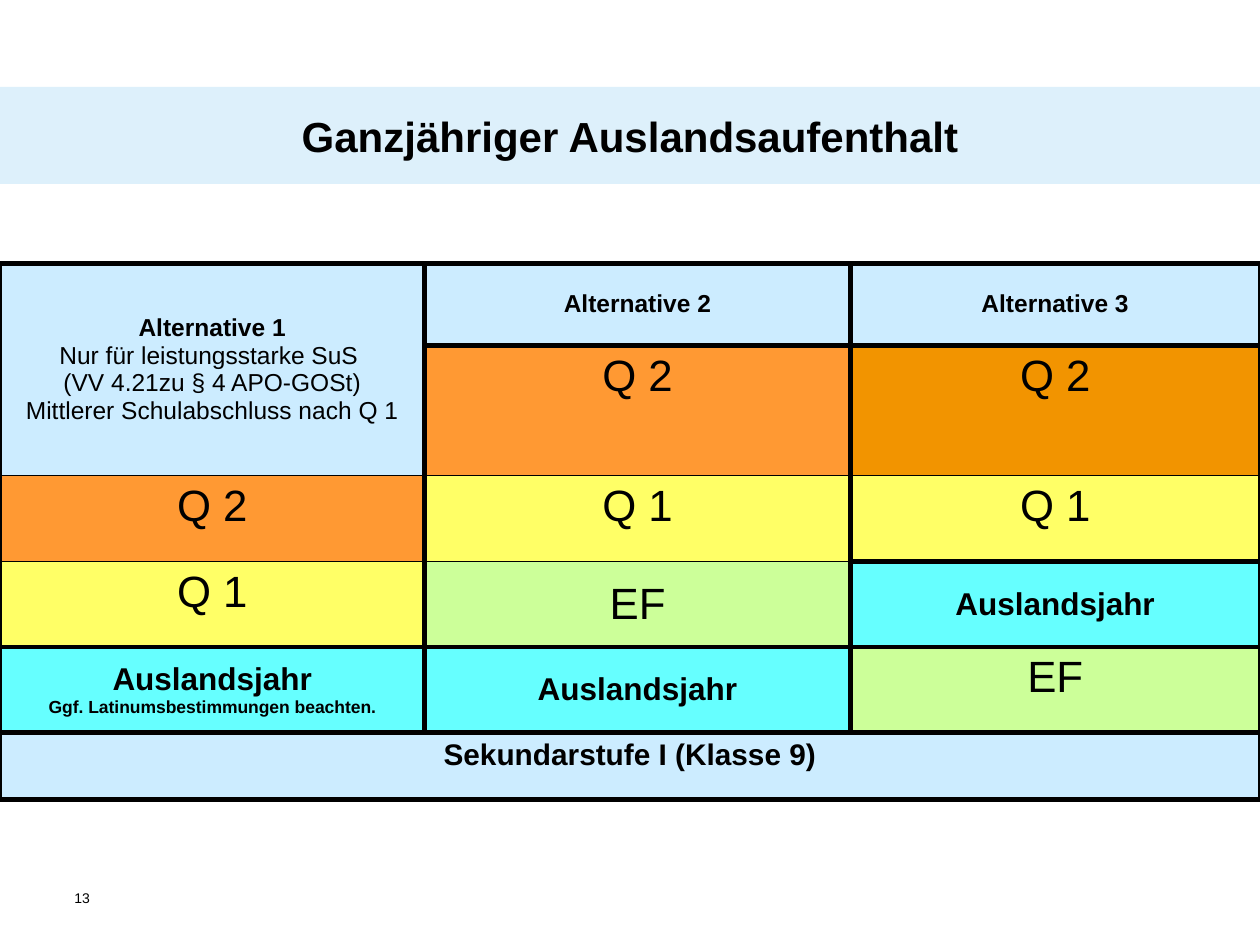
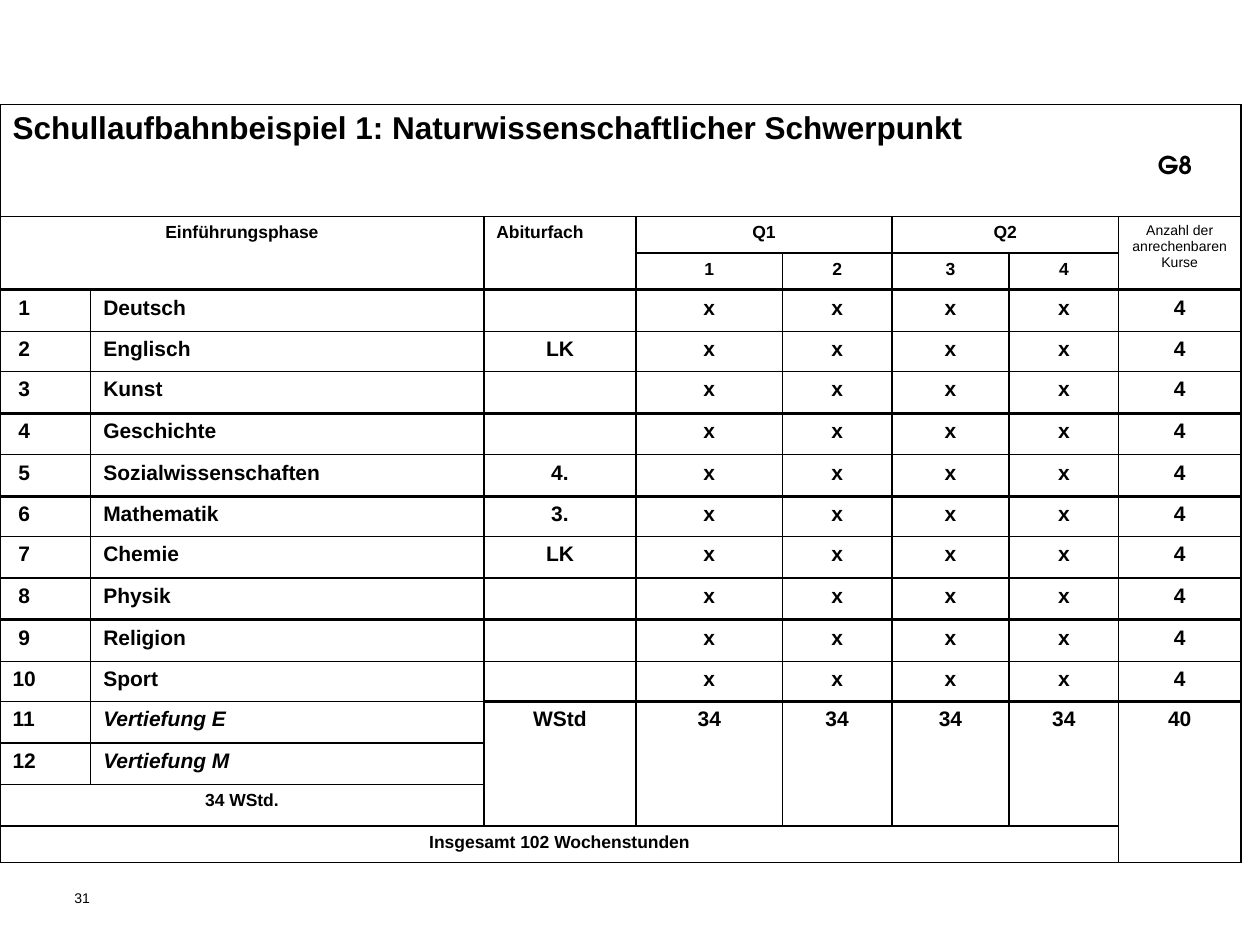
import pptx
import pptx.util
import pptx.dml.color
import pptx.enum.shapes
import pptx.enum.text
import pptx.oxml
import pptx.oxml.ns
import lxml.etree

Inches = pptx.util.Inches
Pt = pptx.util.Pt
qn = pptx.oxml.ns.qn
LEFT = pptx.enum.text.PP_ALIGN.LEFT
MID = pptx.enum.text.PP_ALIGN.CENTER
HIGH = pptx.enum.text.MSO_ANCHOR.TOP
HALF = pptx.enum.text.MSO_ANCHOR.MIDDLE
FACE = "Arial"
PLAIN = "{2D5ABB26-0587-4C30-8999-92F81FD0307C}"

hues = {
    "ink": "000000",
    "band": "DDF0FB",
    "sky": "CCECFF",
    "orange": "FF9933",
    "amber": "F29400",
    "yellow": "FFFF66",
    "green": "CCFF99",
    "aqua": "66FFFF",
}


def rgb(name):
    return pptx.dml.color.RGBColor.from_string(hues[name])


def write(frame, lines, align=LEFT, face=FACE):
    """Fill a frame with lines of (text, size, style); style holds b and i."""
    for n, (text, size, style) in enumerate(lines):
        para = frame.paragraphs[0] if n == 0 else frame.add_paragraph()
        para.alignment = align
        run = para.add_run()
        run.text = text
        run.font.name = face
        run.font.size = Pt(size)
        run.font.bold = "b" in style
        run.font.italic = "i" in style
        run.font.color.rgb = rgb("ink")


# Year abroad: row, column, rows, columns, lines, fill, alignment, anchor
abroad = [
    (0, 0, 2, 1, [("Alternative 1", 14, "b"),
                  ("Nur für leistungsstarke SuS ", 14, ""),
                  ("(VV 4.21zu § 4 APO-GOSt)", 14, ""),
                  ("Mittlerer Schulabschluss nach Q 1", 14, "")],
     "sky", MID, HALF),
    (5, 0, 1, 3, [("Sekundarstufe I (Klasse 9)", 17, "b")], "sky", MID, HIGH),
]
for row, col, text, size, style, fill, anchor in [
    (0, 1, "Alternative 2", 14, "b", "sky", HALF),
    (0, 2, "Alternative 3", 14, "b", "sky", HALF),
    (1, 1, "Q 2", 25, "", "orange", HIGH),
    (1, 2, "Q 2", 25, "", "amber", HIGH),
    (2, 0, "Q 2", 25, "", "orange", HIGH),
    (2, 1, "Q 1", 25, "", "yellow", HIGH),
    (2, 2, "Q 1", 25, "", "yellow", HIGH),
    (3, 0, "Q 1", 25, "", "yellow", HIGH),
    (3, 1, "EF", 25, "", "green", HALF),
    (3, 2, "Auslandsjahr", 18, "b", "aqua", HALF),
    (4, 0, "Auslandsjahr", 18, "b", "aqua", HALF),
    (4, 1, "Auslandsjahr", 18, "b", "aqua", HALF),
    (4, 2, "EF", 25, "", "green", HIGH),
]:
    lines = [(text, size, style)]
    if (row, col) == (4, 0):
        lines.append(("Ggf. Latinumsbestimmungen beachten.", 10, "b"))
    abroad.append((row, col, 1, 1, lines, fill, MID, anchor))

# Course plan: heading and closing cells
plan = []
for row, col, high, wide, text, size, style, align in [
    (0, 0, 1, 8, "Schullaufbahnbeispiel 1: Naturwissenschaftlicher Schwerpunkt",
     18, "b", LEFT),
    (1, 0, 2, 2, "Einführungsphase", 10, "b", MID),
    (1, 2, 2, 1, "Abiturfach", 10, "b", LEFT),
    (1, 3, 1, 2, "Q1", 10, "b", MID),
    (1, 5, 1, 2, "Q2", 10, "b", MID),
    (1, 7, 2, 1, "Anzahl der anrechenbaren Kurse", 8, "", MID),
    (13, 2, 3, 1, "WStd", 12, "b", MID),
    (13, 7, 4, 1, "40", 12, "b", MID),
    (15, 0, 1, 2, "34 WStd.", 10, "b", MID),
    (16, 0, 1, 7, "Insgesamt 102 Wochenstunden", 10, "b", MID),
]:
    plan.append((row, col, high, wide, [(text, size, style)],
                 None, align, HIGH))
for term in range(1, 5):
    plan.append((2, term + 2, 1, 1, [(str(term), 10, "b")], None, MID, HIGH))
    plan.append((13, term + 2, 3, 1, [("34", 12, "b")], None, MID, HIGH))

# Course plan: subjects with their exam role
topics = [
    ("Deutsch", ""), ("Englisch", "LK"), ("Kunst", ""), ("Geschichte", ""),
    ("Sozialwissenschaften", "4."), ("Mathematik", "3."), ("Chemie", "LK"),
    ("Physik", ""), ("Religion", ""), ("Sport", ""),
    ("Vertiefung E", None), ("Vertiefung M", None),
]
for n, (topic, exam) in enumerate(topics, 1):
    texts = [f"{n:>2}", topic]
    if exam is not None:
        texts += [exam] + ["x"] * 4 + ["4"]
    for col, text in enumerate(texts):
        style = "bi" if col == 1 and exam is None else "b"
        lines = [(text, 12, style)] if text else []
        plan.append((n + 2, col, 1, 1, lines, None,
                     MID if col > 1 else LEFT, HIGH))

# Rules under (row, column) that differ from the usual weight
thin = {(1, 0), (1, 1), (1, 2), (2, 0), (2, 1)}
thick = {(row, col) for row in (2, 5, 7, 10, 12) for col in range(8)}
thick -= {(12, 0), (12, 1)}

# number, top, columns, rows, cells, usual weight, odd weight, odd rules
pages = [
    ("13", 2.09, [3.37, 3.38, 3.25], [0.65, 0.64, 0.68, 0.68, 0.68, 0.53],
     abroad, 3, 1, thin),
    ("31", 0.83, [0.72, 3.12, 1.21, 1.16, 0.87, 0.93, 0.87, 0.97],
     [0.89, 0.29, 0.29] + [0.33, 0.32, 0.33, 0.33] * 3 + [0.33, 0.29, 0.29],
     plan, 1, 2, thick),
]

deck = pptx.Presentation()
deck.slide_width = Inches(10)
deck.slide_height = Inches(7.5)

for number, top, cols, rows, cells, usual, odd, rules in pages:
    slide = deck.slides.add_slide(deck.slide_layouts[6])

    # Page number
    foot = slide.shapes.add_textbox(
        Inches(0.59), Inches(7.06), Inches(0.32), Inches(0.37)).text_frame
    foot.word_wrap = True
    foot.margin_left = foot.margin_right = 0
    foot.margin_top = foot.margin_bottom = 0
    write(foot, [(number, 8, "")])

    # Table frame
    grid = slide.shapes.add_table(
        len(rows), len(cols), 0, Inches(top),
        Inches(sum(cols)), Inches(sum(rows))).table
    grid.first_row = grid.horz_banding = False
    grid._tbl.tblPr.find(qn("a:tableStyleId")).text = PLAIN
    for col, width in zip(grid.columns, cols):
        col.width = Inches(width)
    for row, height in zip(grid.rows, rows):
        row.height = Inches(height)

    for row, col, high, wide, lines, fill, align, anchor in cells:
        head = grid.cell(row, col)
        last, end = row + high - 1, col + wide - 1
        if high * wide > 1:
            head.merge(grid.cell(last, end))
        head.vertical_anchor = anchor
        write(head.text_frame, lines, align)

        # Fill and outer borders of every cell in the span
        for y in range(row, last + 1):
            for x in range(col, end + 1):
                cell = grid.cell(y, x)
                if fill:
                    cell.fill.solid()
                    cell.fill.fore_color.rgb = rgb(fill)
                else:
                    cell.fill.background()
                if not cell.text_frame.text:
                    para = cell.text_frame.paragraphs[0]._p
                    lxml.etree.SubElement(para, qn("a:endParaRPr"), sz="1000")
                first = (y, x) == (row, col)
                sides = [
                    ("lnL", first or x == col, usual),
                    ("lnR", first or x == end, usual),
                    ("lnT", first or y == row,
                     odd if (row - 1, x) in rules else usual),
                    ("lnB", first or y == last,
                     odd if (last, x) in rules else usual),
                ]
                shown = [(tag, size) for tag, on, size in sides if on]
                for spot, (tag, size) in enumerate(shown):
                    edge = lxml.etree.Element(qn("a:" + tag), w=str(Pt(size)))
                    paint = lxml.etree.SubElement(edge, qn("a:solidFill"))
                    lxml.etree.SubElement(
                        paint, qn("a:srgbClr"), val=hues["ink"])
                    cell._tc.get_or_add_tcPr().insert(spot, edge)

# Title band of the first slide
band = deck.slides[0].shapes.add_shape(
    pptx.enum.shapes.MSO_SHAPE.RECTANGLE,
    0, Inches(0.69), Inches(10), Inches(0.77))
band.shadow.inherit = False
band.fill.solid()
band.fill.fore_color.rgb = rgb("band")
band.line.fill.background()
band.text_frame.word_wrap = True
band.text_frame.vertical_anchor = HALF
write(band.text_frame, [("Ganzjähriger Auslandsaufenthalt", 24, "b")], MID)

# School type tag of the second slide
tag = deck.slides[1].shapes.add_textbox(
    Inches(9.09), Inches(1.14), Inches(0.55), Inches(0.33)).text_frame
tag.word_wrap = True
write(tag, [("G8", 14, "b")], LEFT, "TeX Gyre Adventor")

deck.save("out.pptx")
